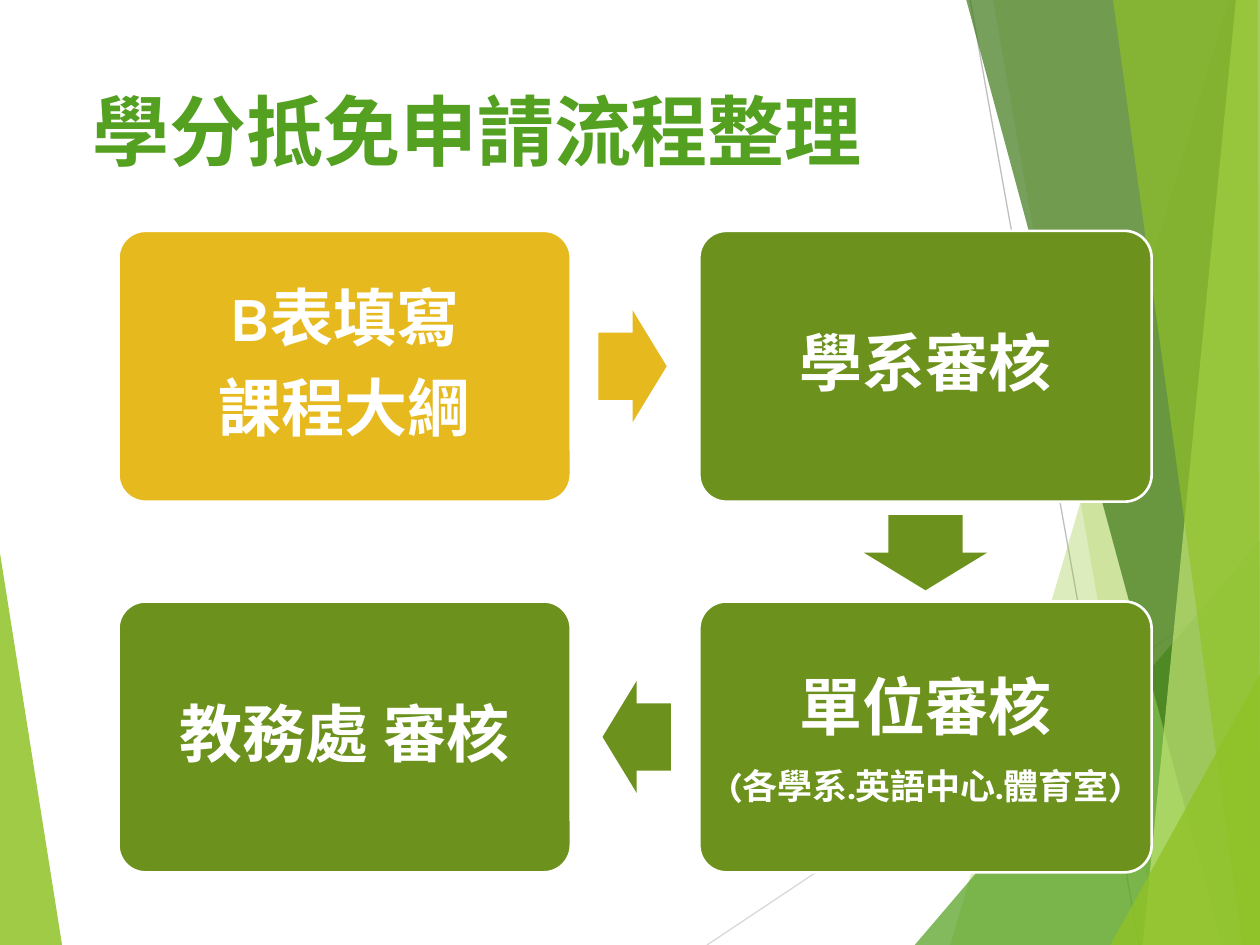
from dataclasses import dataclass

from lxml.etree import SubElement
from pptx import Presentation
from pptx.dml.color import RGBColor
from pptx.enum.shapes import MSO_CONNECTOR, MSO_SHAPE
from pptx.enum.text import MSO_ANCHOR, MSO_AUTO_SIZE, PP_ALIGN
from pptx.oxml.ns import qn
from pptx.shapes.autoshape import Shape
from pptx.slide import Slide
from pptx.text.text import _Paragraph
from pptx.util import Pt


@dataclass(frozen=True)
class Theme:
    white: str = "FFFFFF"
    lime: str = "90C226"
    pale_lime: str = "C0E474"
    green: str = "54A021"
    dark_green: str = "3F7819"
    olive: str = "6C921D"
    gold: str = "E6B91E"
    light_gray: str = "D9D9D9"
    gray: str = "BFBFBF"
    font: str = "Karla"
    title_size: float = 44
    step_size: float = 36
    note_size: float = 20


@dataclass(frozen=True)
class Facet:
    color: str
    opacity: int
    points: tuple[tuple[float, float], ...]


@dataclass(frozen=True)
class Ray:
    color: str
    start: tuple[float, float]
    end: tuple[float, float]


@dataclass(frozen=True)
class Step:
    column: int
    row: int
    color: str
    lines: tuple[tuple[str, float], ...]
    line_spacing: float = 0.9


@dataclass(frozen=True)
class Arrow:
    center: tuple[float, float]
    size: tuple[float, float]
    rotation: int
    color: str


THEME = Theme()
WIDTH, HEIGHT = 720, 540
CARD_LEFT, CARD_TOP = 67.7, 131.9
CARD_WIDTH, CARD_HEIGHT = 258.5, 154.8
COLUMN_STEP, ROW_STEP = 331.9, 211.8
ROW_MIDDLES = [CARD_TOP + CARD_HEIGHT / 2 + row * ROW_STEP for row in range(2)]
RIGHT_COLUMN_MIDDLE = CARD_LEFT + COLUMN_STEP + CARD_WIDTH / 2
BOTTOM_RIGHT, TOP_RIGHT = (WIDTH, HEIGHT), (WIDTH, 0)

LEFT_FACET = Facet(THEME.lime, 85, ((0, 316), (35.5, HEIGHT), (0, HEIGHT)))
RAYS = (
    Ray(THEME.light_gray, (404, HEIGHT), (WIDTH, 329.4)),
    Ray(THEME.gray, (554.4, 0), (651, HEIGHT)),
)
RIGHT_FACETS = (
    Facet(THEME.lime, 30, ((702, 0), (543, HEIGHT), BOTTOM_RIGHT, TOP_RIGHT)),
    Facet(THEME.lime, 20, ((567.5, 0), (661.7, HEIGHT), BOTTOM_RIGHT, TOP_RIGHT)),
    Facet(THEME.green, 72, ((522.7, HEIGHT), (WIDTH, 309), BOTTOM_RIGHT)),
    Facet(THEME.dark_green, 70, ((552.2, 0), (698.4, HEIGHT), BOTTOM_RIGHT, TOP_RIGHT)),
    Facet(THEME.pale_lime, 70, ((706.3, 0), (653, HEIGHT), BOTTOM_RIGHT, TOP_RIGHT)),
    Facet(THEME.lime, 65, ((636, 0), (710, HEIGHT), BOTTOM_RIGHT, (718.6, 0))),
    Facet(THEME.lime, 80, ((634.5, HEIGHT), (WIDTH, 385.2), BOTTOM_RIGHT)),
)
STEPS = (
    Step(0, 0, THEME.gold, (("B表填寫", THEME.step_size), ("課程大綱", THEME.step_size))),
    Step(1, 0, THEME.olive, (("學系審核", THEME.step_size),)),
    Step(1, 1, THEME.olive, (("單位審核", THEME.step_size),
                             ("(各學系.英語中心.體育室)", THEME.note_size)), 1.0),
    Step(0, 1, THEME.olive, (("教務處 審核", THEME.step_size),)),
)
ARROWS = (
    Arrow((361.5, ROW_MIDDLES[0]), (39, 64), 0, THEME.gold),
    Arrow((RIGHT_COLUMN_MIDDLE, 315.8), (43, 70.5), 90, THEME.olive),
    Arrow((363.8, ROW_MIDDLES[1]), (39, 64), 180, THEME.olive),
)


def paint(shape: Shape, color: str) -> None:
    shape.shadow.inherit = False
    shape.fill.solid()
    shape.fill.fore_color.rgb = RGBColor.from_string(color)
    shape.line.fill.background()


def style_text(paragraph: _Paragraph, size: float, color: str) -> None:
    font = paragraph.font
    font.name = THEME.font
    font.size = Pt(size)
    font.bold = True
    font.color.rgb = RGBColor.from_string(color)


def draw_facet(slide: Slide, facet: Facet) -> None:
    points = [(Pt(x), Pt(y)) for x, y in facet.points]
    builder = slide.shapes.build_freeform(*points[0])
    builder.add_line_segments(points[1:], close=True)
    shape = builder.convert_to_shape()
    paint(shape, facet.color)
    color = shape.fill._xPr.find(".//" + qn("a:srgbClr"))
    SubElement(color, qn("a:alpha"), val=str(facet.opacity * 1000))


def draw_ray(slide: Slide, ray: Ray) -> None:
    ends = [Pt(value) for value in (*ray.start, *ray.end)]
    connector = slide.shapes.add_connector(MSO_CONNECTOR.STRAIGHT, *ends)
    connector.line.color.rgb = RGBColor.from_string(ray.color)
    connector.line.width = Pt(0.75)
    SubElement(connector._element.spPr, qn("a:effectLst"))


def draw_step(slide: Slide, step: Step) -> None:
    card = slide.shapes.add_shape(
        MSO_SHAPE.ROUNDED_RECTANGLE,
        Pt(CARD_LEFT + step.column * COLUMN_STEP),
        Pt(CARD_TOP + step.row * ROW_STEP),
        Pt(CARD_WIDTH), Pt(CARD_HEIGHT))
    card.adjustments[0] = 0.1
    paint(card, step.color)
    card.line.color.rgb = RGBColor.from_string(THEME.white)
    card.line.width = Pt(1.5)

    frame = card.text_frame
    frame.word_wrap = True
    frame.vertical_anchor = MSO_ANCHOR.MIDDLE
    frame.margin_left = frame.margin_right = Pt(12)
    frame.margin_top = frame.margin_bottom = Pt(12)
    for index, (text, size) in enumerate(step.lines):
        paragraph = frame.add_paragraph() if index else frame.paragraphs[0]
        paragraph.text = text
        paragraph.alignment = PP_ALIGN.CENTER
        paragraph.line_spacing = step.line_spacing
        paragraph.space_after = Pt(size * 0.35)
        style_text(paragraph, size, THEME.white)


def draw_arrow(slide: Slide, arrow: Arrow) -> None:
    (x, y), (width, height) = arrow.center, arrow.size
    shape = slide.shapes.add_shape(
        MSO_SHAPE.RIGHT_ARROW, Pt(x - width / 2), Pt(y - height / 2), Pt(width), Pt(height))
    shape.adjustments[0], shape.adjustments[1] = 0.6, 0.5
    shape.rotation = arrow.rotation
    paint(shape, arrow.color)


def fill_title(slide: Slide, text: str) -> None:
    title = slide.shapes.title
    title.left, title.top, title.width, title.height = Pt(45.4), Pt(44), Pt(487), Pt(60)
    frame = title.text_frame
    frame.text = text
    frame.word_wrap = True
    frame.auto_size = MSO_AUTO_SIZE.NONE
    frame.vertical_anchor = MSO_ANCHOR.MIDDLE
    frame.paragraphs[0].alignment = PP_ALIGN.LEFT
    style_text(frame.paragraphs[0], THEME.title_size, THEME.green)


def main() -> None:
    presentation = Presentation()
    presentation.slide_width, presentation.slide_height = Pt(WIDTH), Pt(HEIGHT)
    slide = presentation.slides.add_slide(presentation.slide_layouts.get_by_name("Title Only"))
    draw_facet(slide, LEFT_FACET)
    for ray in RAYS:
        draw_ray(slide, ray)
    for facet in RIGHT_FACETS:
        draw_facet(slide, facet)
    fill_title(slide, "學分抵免申請流程整理")
    for step in STEPS:
        draw_step(slide, step)
    for arrow in ARROWS:
        draw_arrow(slide, arrow)
    presentation.save("out.pptx")


if __name__ == "__main__":
    main()
